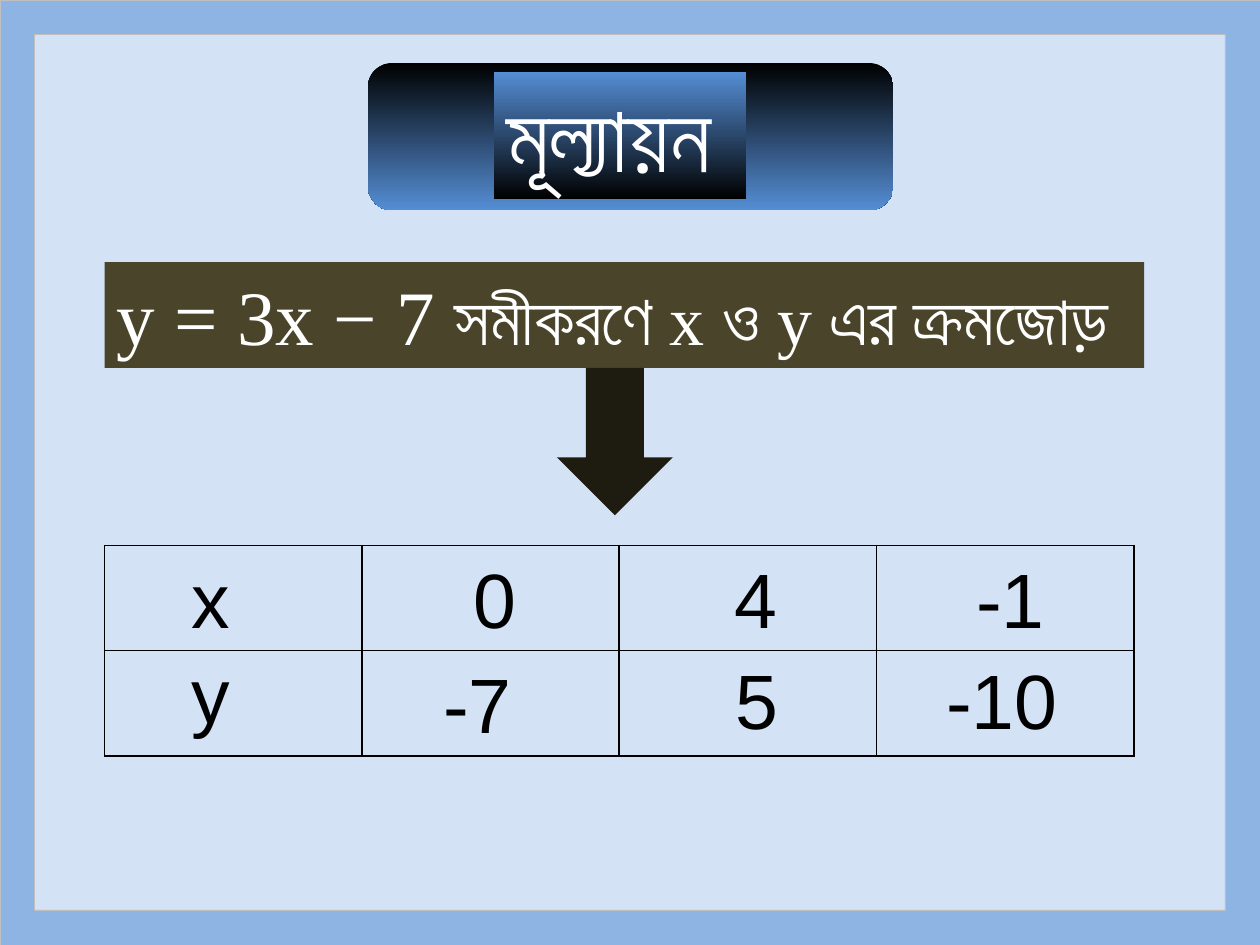
from lxml import etree
from pptx import Presentation
from pptx.dml.color import RGBColor
from pptx.enum import shapes, text
from pptx.oxml import ns
from pptx.util import Inches, Pt

HUES = {
    "back": "D4E2F5", "frame": "8EB4E3", "edge": "BFBFBF", "blue": "558ED5",
    "black": "000000", "white": "FFFFFF", "band": "4A452A", "arrow": "1E1C11",
}
KINDS = shapes.MSO_SHAPE


def hue(name):
    return RGBColor.from_string(HUES[name])


def write(para, words, size=44, font="Arial", color="black"):
    run = para.add_run()
    run.text = words
    run.font.size = Pt(size)
    run.font.name = font
    run.font.color.rgb = hue(color)


class Deck:
    def __init__(self, width, height):
        self.file = Presentation()
        self.file.slide_width = Inches(width)
        self.file.slide_height = Inches(height)
        self.slide = self.file.slides.add_slide(self.file.slide_layouts[6])
        fill = self.slide.background.fill
        fill.solid()
        fill.fore_color.rgb = hue("back")

    def shape(self, kind, box, *colors, line=None):
        item = self.slide.shapes.add_shape(kind, *map(Inches, box))
        item.shadow.inherit = False
        if len(colors) == 1:
            item.fill.solid()
            item.fill.fore_color.rgb = hue(colors[0])
        else:
            item.fill.gradient()
            item.fill.gradient_angle = 270
            for stop, color in zip(item.fill.gradient_stops, colors):
                stop.color.rgb = hue(color)
        if line:
            item.line.color.rgb = hue(line)
            item.line.width = Pt(0.5)
        else:
            item.line.fill.background()
        return item

    def lead(self, item, wrap):
        frame = item.text_frame
        frame.word_wrap = wrap
        frame.vertical_anchor = text.MSO_ANCHOR.TOP
        para = frame.paragraphs[0]
        para.alignment = text.PP_ALIGN.LEFT
        return para

    def label(self, words, box):
        item = self.slide.shapes.add_textbox(*map(Inches, box))
        write(self.lead(item, False), words)

    def grid(self, rows, cols, box):
        item = self.slide.shapes.add_table(rows, cols, *map(Inches, box))
        for cell in item.table.iter_cells():
            cell.fill.background()
            props = cell._tc.get_or_add_tcPr()
            for spot, side in enumerate(("lnL", "lnR", "lnT", "lnB")):
                edge = etree.Element(ns.qn("a:" + side), w=str(Pt(1)))
                fill = etree.SubElement(edge, ns.qn("a:solidFill"))
                etree.SubElement(fill, ns.qn("a:srgbClr"), val=HUES["black"])
                props.insert(spot, edge)


def main():
    deck = Deck(10, 7.5)
    frame = deck.shape(KINDS.FRAME, (0, 0, 10, 7.5), "frame", line="edge")
    frame.adjustments[0] = 0.037

    deck.shape(KINDS.FLOWCHART_ALTERNATE_PROCESS, (2.92, 0.5, 4.17, 1.17),
               "black", "blue")
    title = deck.shape(KINDS.RECTANGLE, (3.92, 0.57, 2, 1.01), "blue", "black")
    write(deck.lead(title, False), "মূল্যায়ন", size=54, color="white")

    band = deck.shape(KINDS.RECTANGLE, (0.83, 2.08, 8.25, 0.84), "band")
    para = deck.lead(band, True)
    serif = "Times New Roman"
    for words, size, font in (
        ("y = 3x − 7 ", 44, serif), ("সমীকরণে ", 40, "Arial"),
        ("x ", 40, serif), ("ও", 40, "Arial"),
        (" y ", 40, serif), ("এর ক্রমজোড়", 40, "Arial"),
    ):
        write(para, words, size=size, font=font, color="white")

    deck.shape(KINDS.DOWN_ARROW, (4.42, 2.92, 0.92, 1.17), "arrow")

    deck.grid(2, 4, (0.83, 4.33, 8.17, 1.67))
    for words, left, top, width in (
        ("x", 1.42, 4.33, 0.51), ("y", 1.42, 5.08, 0.51),
        ("0", 3.66, 4.33, 0.55), ("-7", 3.42, 5.16, 0.75),
        ("4", 5.73, 4.33, 0.55), ("5", 5.74, 5.13, 0.55),
        ("-1", 7.65, 4.33, 0.75), ("-10", 7.41, 5.13, 1.09),
    ):
        deck.label(words, (left, top, width, 0.84))

    deck.file.save("out.pptx")


if __name__ == "__main__":
    main()
